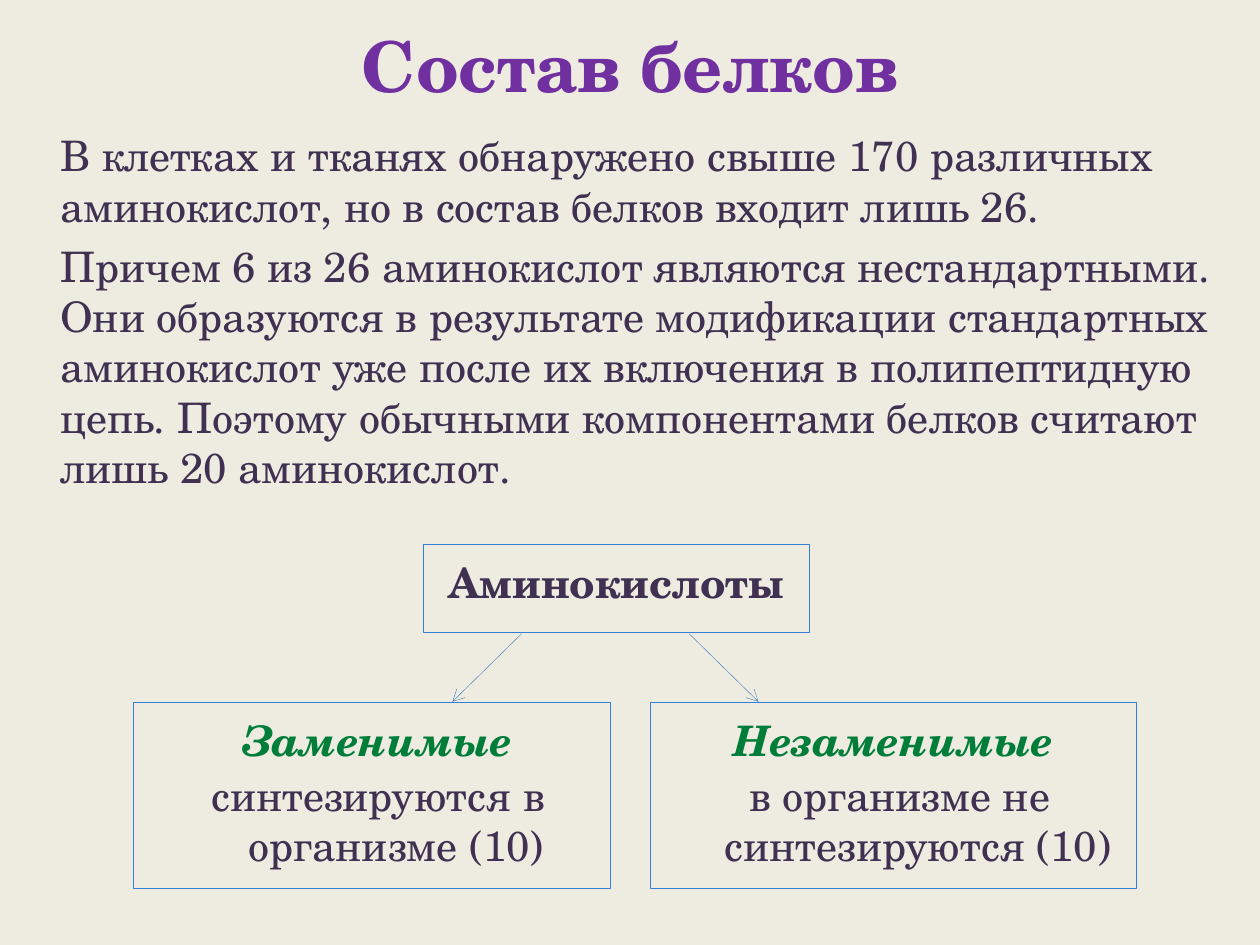
"""Build the slide on protein composition and the two kinds of amino acids."""
from lxml.etree import SubElement
from pptx import Presentation
from pptx.dml.color import RGBColor
from pptx.enum.shapes import MSO_CONNECTOR, MSO_SHAPE
from pptx.enum.text import MSO_ANCHOR, PP_ALIGN
from pptx.oxml.ns import qn
from pptx.util import Inches, Pt

FONT = "TeX Gyre Schola"
CREAM = RGBColor(0xEE, 0xEC, 0xE1)
PURPLE = RGBColor(0x70, 0x30, 0xA0)
DARK = RGBColor(0x40, 0x31, 0x52)
GREEN = RGBColor(0x00, 0x7E, 0x39)
BORDER = RGBColor(0x33, 0x7E, 0xD9)
ARROW = RGBColor(0x4B, 0x7E, 0xBC)

deck = Presentation()
deck.slide_width, deck.slide_height = Inches(10), Inches(7.5)
COLUMN, ROW = deck.slide_width / 100, deck.slide_height / 75
slide = deck.slides.add_slide(deck.slide_layouts[6])
slide.background.fill.solid()
slide.background.fill.fore_color.rgb = CREAM


def cells(left, top, width, height):
    """Turn grid columns and rows into slide lengths."""
    return [round(n * unit) for n, unit in zip((left, top, width, height), (COLUMN, ROW) * 2)]


def style(paragraph, size, color, bold=False, italic=False, hang=0, before=0, align=PP_ALIGN.LEFT):
    """Format a paragraph and all its runs."""
    paragraph.alignment = align
    paragraph.space_before = Pt(before)
    properties = paragraph._p.get_or_add_pPr()
    properties.set("marL", str(Inches(hang)))
    properties.set("indent", str(-Inches(hang)))
    for run in paragraph.runs:
        font = run.font
        font.name, font.size, font.bold, font.italic = FONT, Pt(size), bold, italic
        font.color.rgb = color


title = slide.shapes.add_textbox(*cells(5, -1.1, 90, 12.5)).text_frame
title.word_wrap = True
title.vertical_anchor = MSO_ANCHOR.MIDDLE
title.text = "Состав белков"
style(title.paragraphs[0], 40, PURPLE, bold=True, align=PP_ALIGN.CENTER)

body = slide.shapes.add_textbox(*cells(0, 9.2, 100, 27.6)).text_frame
body.word_wrap = True
body.text = "\t"
found, modified = body.paragraphs[0], body.add_paragraph()
found.add_run().text = (
    "В клетках и тканях обнаружено свыше 170 различных аминокислот, "
    "но в состав белков входит лишь 26."
)
modified.text = (
    "\tПричем 6 из 26 аминокислот являются нестандартными. Они образуются "
    "в результате модификации стандартных аминокислот уже после их включения "
    "в полипептидную цепь. Поэтому обычными компонентами белков считают "
    "лишь 20 аминокислот."
)
for statement in (found, modified):
    style(statement, 24, DARK, hang=0.38, before=5)
found.runs[0].font.size = Pt(28)

HEADING = (24, GREEN, True, True)
DETAIL = (24, DARK)
BOXES = [
    ((33.6, 43.2, 30.6, 7), PP_ALIGN.LEFT, [("Аминокислоты", (23.8, DARK, True))]),
    ((10.6, 55.7, 37.8, 14.8), PP_ALIGN.CENTER,
     [("Заменимые", HEADING), ("синтезируются в организме (10)", DETAIL)]),
    ((51.6, 55.7, 38.6, 14.8), PP_ALIGN.CENTER,
     [("Незаменимые ", HEADING), ("в организме не синтезируются (10)", DETAIL)]),
]
for place, align, lines in BOXES:
    box = slide.shapes.add_shape(MSO_SHAPE.RECTANGLE, *cells(*place))
    box.shadow.inherit = False
    box.fill.background()
    box.line.color.rgb, box.line.width = BORDER, Pt(0.25)
    frame = box.text_frame
    frame.word_wrap = True
    frame.vertical_anchor = MSO_ANCHOR.TOP
    frame.margin_left, frame.margin_top = Inches(0.2), Inches(0.1)
    frame.margin_right, frame.margin_bottom = Inches(0.1), Inches(0.05)
    frame.text = "\n".join(text for text, look in lines)
    for paragraph, (text, look) in zip(frame.paragraphs, lines):
        style(paragraph, *look, hang=0.29, before=2.5, align=align)

AXIS = 48.05
for side in (-1, 1):
    ends = cells(AXIS + side * 6.65, 50.3, AXIS + side * 12.15, 55.7)
    branch = slide.shapes.add_connector(MSO_CONNECTOR.STRAIGHT, *ends)
    branch.line.color.rgb, branch.line.width = ARROW, Pt(0.25)
    SubElement(branch.line._get_or_add_ln(), qn("a:tailEnd"), type="arrow")
    SubElement(branch._element.spPr, qn("a:effectLst"))

deck.save("out.pptx")
